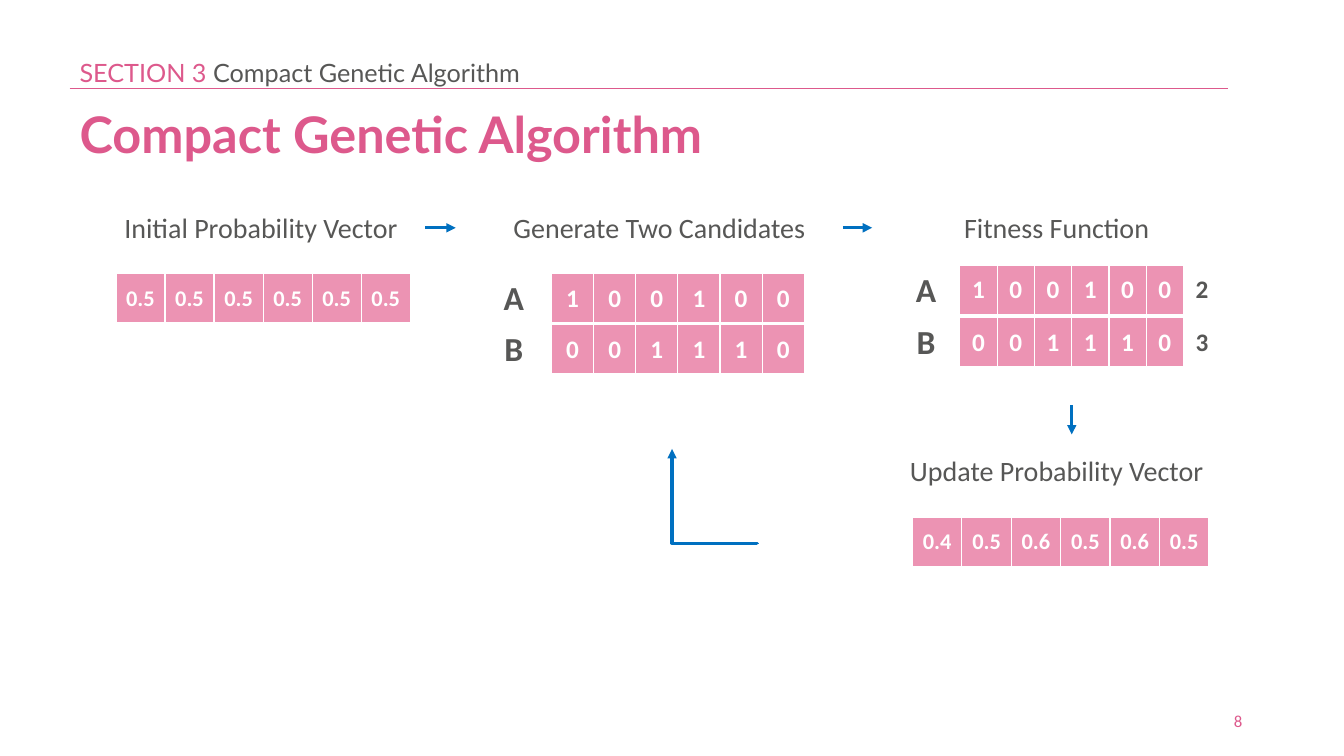
import pptx
import pptx.util
import pptx.dml.color
import pptx.enum.shapes
import pptx.enum.text
import pptx.oxml.ns
import lxml.etree

Inches = pptx.util.Inches
ALIGN = pptx.enum.text.PP_ALIGN
ANCHOR = pptx.enum.text.MSO_ANCHOR
CONNECTOR = pptx.enum.shapes.MSO_CONNECTOR

COLORS = {"pink": "DD598C", "cell": "EC93B3", "gray": "575756",
          "blue": "0070C0", "white": "FFFFFF"}

TITLE = "Compact Genetic Algorithm"
SECTION = [("SECTION 3 ", "pink"), ("Compact Genetic Algorithm", "gray")]
PAGE_NUMBER = "8"

# text, left, top, width
HEADINGS = [
    ("Initial Probability Vector", 0.96, 2.04, 3.26),
    ("Generate Two Candidates", 4.72, 2.04, 3.64),
    ("Fitness Function", 8.85, 2.04, 3.26),
    ("Update Probability Vector", 8.85, 4.45, 3.26),
]

# label, genes, score, left, top, label column width, gene column width, gene size
VECTORS = [
    ("", "0.5 0.5 0.5 0.5 0.5 0.5", "", 0.28, 2.71, 0.87, 0.487, 16),
    ("A", "1 0 0 1 0 0", "", 4.72, 2.71, 0.75, 0.418, 18),
    ("B", "0 0 1 1 1 0", "", 4.72, 3.22, 0.75, 0.418, 18),
    ("A", "1 0 0 1 0 0", "2", 8.85, 2.63, 0.67, 0.37, 18),
    ("B", "0 0 1 1 1 0", "3", 8.85, 3.15, 0.67, 0.37, 18),
    ("", "0.4 0.5 0.6 0.5 0.6 0.5", "", 8.17, 5.13, 0.88, 0.49, 16),
]
ROW_HEIGHT = 0.5
BORDERS = {"lnL": 1, "lnR": 1, "lnT": 1, "lnB": 3}

# left, top, right, bottom
ARROWS = [(4.22, 2.26, 4.52, 2.26), (8.36, 2.26, 8.65, 2.26), (10.63, 4.02, 10.63, 4.31)]
LOOP_FRAME = (6.62, 5.35, 7.56, 4.5)


def color(name):
    return pptx.dml.color.RGBColor.from_string(COLORS[name])


def add_child(parent, tag, **attributes):
    child = lxml.etree.SubElement(parent, pptx.oxml.ns.qn(tag))
    for name, value in attributes.items():
        child.set(name, str(value))
    return child


def write(frame, spans, align=ALIGN.LEFT, spacing=None, **font):
    """Fill the first paragraph with (text, colour name) spans."""
    para = frame.paragraphs[0]
    para.alignment = align
    if spacing:
        para.line_spacing = spacing
    for text, color_name in spans:
        span = para.add_run()
        span.text = text
        span.font.color.rgb = color(color_name)
        for name, value in font.items():
            setattr(span.font, name, pptx.util.Pt(value) if name == "size" else value)


def add_text(slide, area, spans, anchor=ANCHOR.TOP, **style):
    box = slide.shapes.add_textbox(*map(Inches, area))
    box.text_frame.word_wrap = True
    box.text_frame.vertical_anchor = anchor
    write(box.text_frame, spans, **style)


def add_line(slide, ends, color_name, width, kind=CONNECTOR.STRAIGHT, arrow=True):
    line = slide.shapes.add_connector(kind, *map(Inches, ends))
    line.line.color.rgb = color(color_name)
    line.line.width = pptx.util.Pt(width)
    if arrow:
        add_child(line.line._get_or_add_ln(), "a:tailEnd", type="triangle")
    add_child(line._element.spPr, "a:effectLst")
    return line


def add_loop(slide):
    """Elbow arrow that runs left, then up, back to the candidates."""
    loop = add_line(slide, LOOP_FRAME, "blue", 2.25, CONNECTOR.ELBOW)
    properties = loop._element.spPr
    properties.find(pptx.oxml.ns.qn("a:xfrm")).set("rot", str(270 * 60000))
    geometry = properties.find(pptx.oxml.ns.qn("a:prstGeom"))
    for guides in list(geometry):
        geometry.remove(guides)
    add_child(add_child(geometry, "a:avLst"), "a:gd", name="adj1", fmla="val 600")


def add_borders(cell):
    properties = cell._tc.get_or_add_tcPr()
    for index, (side, width) in enumerate(BORDERS.items()):
        border = add_child(properties, "a:" + side, w=pptx.util.Pt(width))
        add_child(add_child(border, "a:solidFill"), "a:srgbClr", val=COLORS["white"])
        properties.insert(index, border)


def add_vector(slide, label, genes, score, left, top, label_width, gene_width, size):
    genes = genes.split()
    texts = [label] + genes + ([score] if score else [])
    widths = [label_width] + [gene_width] * (len(texts) - 1)
    table = slide.shapes.add_table(
        1, len(texts), *map(Inches, (left, top, sum(widths), ROW_HEIGHT))).table
    table.first_row = table.horz_banding = False
    for index, (text, width) in enumerate(zip(texts, widths)):
        table.columns[index].width = Inches(width)
        cell = table.cell(0, index)
        cell.margin_left = cell.margin_right = Inches(0.05)
        is_gene = 1 <= index <= len(genes)
        if is_gene:
            cell.fill.solid()
            cell.fill.fore_color.rgb = color("cell")
        else:
            cell.fill.background()
        cell.vertical_anchor = ANCHOR.MIDDLE if index else ANCHOR.TOP
        if text:
            write(cell.text_frame, [(text, "white" if is_gene else "gray")],
                  align=ALIGN.CENTER, size=size if index else 24, name="Calibri", bold=True)
        add_borders(cell)


def main():
    deck = pptx.Presentation()
    deck.slide_width, deck.slide_height = Inches(13.33), Inches(7.5)
    slide = deck.slides.add_slide(deck.slide_layouts[5])

    title = slide.shapes.title
    title.left, title.top, title.width, title.height = map(Inches, (0.69, 1.04, 11.59, 0.55))
    title.text_frame.word_wrap = True
    title.text_frame.auto_size = pptx.enum.text.MSO_AUTO_SIZE.NONE
    title.text_frame.vertical_anchor = ANCHOR.TOP
    write(title.text_frame, [(TITLE, "pink")], spacing=0.9, size=36, name="Lato", bold=True)

    add_line(slide, (0.69, 0.88, 12.18, 0.88), "pink", 0.5, arrow=False)
    add_text(slide, (0.69, 0.55, 11.59, 0.55), SECTION, spacing=0.9, size=18, name="Lato")
    add_text(slide, (9.42, 6.95, 3, 0.4), [(PAGE_NUMBER, "pink")], ANCHOR.MIDDLE,
             align=ALIGN.RIGHT, size=12, name="Calibri")

    for text, left, top, width in HEADINGS:
        add_text(slide, (left, top, width, 0.44), [(text, "gray")],
                 align=ALIGN.CENTER, size=20, name="Calibri")
    for vector in VECTORS:
        add_vector(slide, *vector)
    for ends in ARROWS:
        add_line(slide, ends, "blue", 2.25)
    add_loop(slide)
    deck.save("out.pptx")


if __name__ == "__main__":
    main()
